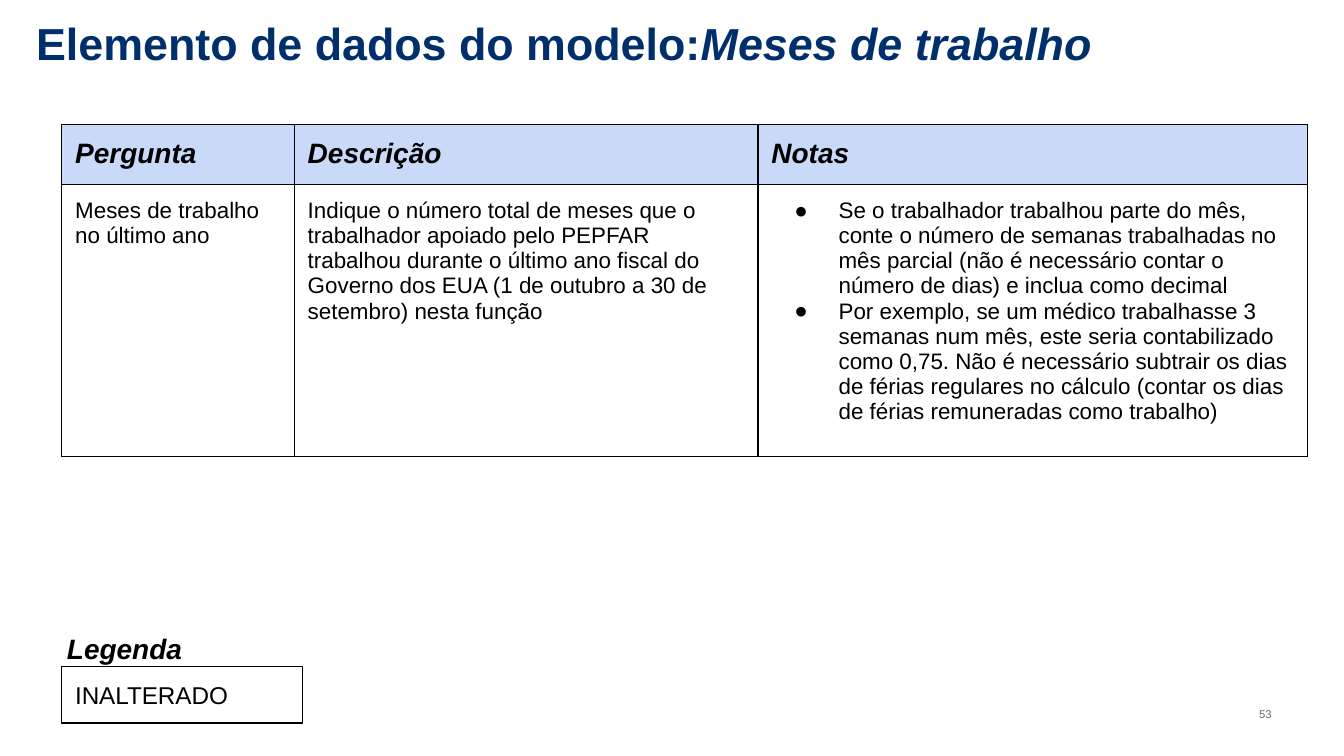
import dataclasses
import typing

import lxml.etree
import pptx
import pptx.dml.color
import pptx.enum.shapes
import pptx.enum.text
import pptx.oxml
import pptx.oxml.ns
import pptx.util

RGBColor = pptx.dml.color.RGBColor
Anchor = pptx.enum.text.MSO_ANCHOR

NAVY = RGBColor(0x00, 0x2F, 0x6C)
GREY = RGBColor(0x6C, 0x64, 0x63)
BLACK = RGBColor(0x00, 0x00, 0x00)
PALE_BLUE = RGBColor(0xC9, 0xDA, 0xF8)

FONT = "Arial"
UNIT = pptx.util.Inches(0.1)  # one grid column or row
SLIDE_COLUMNS, SLIDE_ROWS = 100, 56.25
BORDER = pptx.util.Pt(0.75)


def grid(count: float) -> int:
    """Length of a number of grid columns or rows."""
    return round(count * UNIT)


@dataclasses.dataclass(frozen=True)
class Area:
    column: float
    row: float
    columns: float
    rows: float

    def lengths(self) -> tuple[int, int, int, int]:
        return grid(self.column), grid(self.row), grid(self.columns), grid(self.rows)


@dataclasses.dataclass(frozen=True)
class Style:
    size: float
    color: RGBColor = BLACK
    bold: bool = False
    italic: bool = False


@dataclasses.dataclass(frozen=True)
class Label:
    area: Area
    runs: tuple[tuple[str, Style], ...]
    anchor: Anchor = Anchor.TOP
    inset_rows: float = 1
    outlined: bool = False


@dataclasses.dataclass(frozen=True)
class Column:
    width: float
    heading: str
    entries: tuple[str, ...]
    bulleted: bool = False


TITLE = Style(24, NAVY, bold=True)
TITLE_ITALIC = dataclasses.replace(TITLE, italic=True)
HEADING = Style(15, bold=True, italic=True)
BODY = Style(12)

LABELS = (
    Label(Area(1.7, -0.15, 93.2, 6.3),
          (("Elemento de dados do modelo:", TITLE), ("Meses de trabalho", TITLE_ITALIC)),
          Anchor.BOTTOM),
    Label(Area(92.7, 51, 6, 4.3), (("53", Style(6, GREY)),), Anchor.MIDDLE, 0.5),
    Label(Area(4.6, 49.6, 17.9, 4.2), (("INALTERADO", Style(13)),), outlined=True),
    Label(Area(4, 46, 11.6, 4.5), (("Legenda", HEADING),)),
)

TABLE_LEFT, TABLE_TOP = 4.6, 9.25
TABLE_ROWS = (4, 20.2)
COLUMNS = (
    Column(17.3, "Pergunta", ("Meses de trabalho no último ano",)),
    Column(34.5, "Descrição", (
        "Indique o número total de meses que o trabalhador apoiado pelo PEPFAR "
        "trabalhou durante o último ano fiscal do Governo dos EUA "
        "(1 de outubro a 30 de setembro) nesta função",)),
    Column(40.9, "Notas", (
        "Se o trabalhador trabalhou parte do mês, conte o número de semanas "
        "trabalhadas no mês parcial (não é necessário contar o número de dias) "
        "e inclua como decimal",
        "Por exemplo, se um médico trabalhasse 3 semanas num mês, este seria "
        "contabilizado como 0,75. Não é necessário subtrair os dias de férias "
        "regulares no cálculo (contar os dias de férias remuneradas como trabalho)"),
        bulleted=True),
)


def add_element(parent: typing.Any, tag: str, **attributes: str) -> typing.Any:
    element = lxml.etree.SubElement(parent, pptx.oxml.ns.qn(tag))
    for name, value in attributes.items():
        element.set(name, value)
    return element


def style_font(font: typing.Any, style: Style) -> None:
    font.name = FONT
    font.size = pptx.util.Pt(style.size)
    font.bold = style.bold
    font.italic = style.italic
    font.color.rgb = style.color


def set_insets(target: typing.Any, rows: float = 1) -> None:
    target.margin_left = target.margin_right = grid(1)
    target.margin_top = target.margin_bottom = grid(rows)


def add_label(page: typing.Any, label: Label) -> None:
    if label.outlined:
        box = page.shapes.add_shape(
            pptx.enum.shapes.MSO_SHAPE.RECTANGLE, *label.area.lengths())
        box.shadow.inherit = False
        box.fill.background()
        box.line.color.rgb = BLACK
        box.line.width = BORDER
    else:
        box = page.shapes.add_textbox(*label.area.lengths())
    frame = box.text_frame
    frame.word_wrap = True
    frame.vertical_anchor = label.anchor
    set_insets(frame, label.inset_rows)
    para = frame.paragraphs[0]
    para.alignment = pptx.enum.text.PP_ALIGN.LEFT
    for text, style in label.runs:
        span = para.add_run()
        span.text = text
        style_font(span.font, style)


def add_bullet(para: typing.Any) -> None:
    properties = para._p.get_or_add_pPr()
    properties.set("marL", str(grid(5)))
    properties.set("indent", str(grid(-3.3)))
    color = add_element(properties, "a:buClr")
    add_element(color, "a:srgbClr", val=str(BLACK))
    add_element(properties, "a:buFont", typeface=FONT)
    add_element(properties, "a:buChar", char="●")


def add_borders(cell: typing.Any) -> None:
    properties = cell._tc.get_or_add_tcPr()
    for position, side in enumerate(("a:lnL", "a:lnR", "a:lnT", "a:lnB")):
        line = add_element(properties, side, w=str(BORDER))
        fill = add_element(line, "a:solidFill")
        add_element(fill, "a:srgbClr", val=str(BLACK))
        properties.insert(position, line)  # borders come before the fill


def fill_cell(cell: typing.Any, entries: tuple[str, ...], style: Style,
              bulleted: bool = False) -> None:
    set_insets(cell)
    cell.vertical_anchor = Anchor.TOP
    cell.text_frame.text = "\n".join(entries)
    for para in cell.text_frame.paragraphs:
        if bulleted:
            add_bullet(para)
        for span in para.runs:
            style_font(span.font, style)
    if style is HEADING:
        cell.fill.solid()
        cell.fill.fore_color.rgb = PALE_BLUE
    else:
        cell.fill.background()
    add_borders(cell)


def add_question_table(page: typing.Any) -> None:
    area = Area(TABLE_LEFT, TABLE_TOP,
                sum(column.width for column in COLUMNS), sum(TABLE_ROWS))
    table = page.shapes.add_table(
        len(TABLE_ROWS), len(COLUMNS), *area.lengths()).table
    table.horz_banding = False
    for row, height in zip(table.rows, TABLE_ROWS):
        row.height = grid(height)
    for index, column in enumerate(COLUMNS):
        table.columns[index].width = grid(column.width)
        fill_cell(table.cell(0, index), (column.heading,), HEADING)
        fill_cell(table.cell(1, index), column.entries, BODY, column.bulleted)


def main() -> None:
    deck = pptx.Presentation()
    deck.slide_width, deck.slide_height = grid(SLIDE_COLUMNS), grid(SLIDE_ROWS)
    page = deck.slides.add_slide(deck.slide_layouts[6])
    # Title, page number and legend
    for label in LABELS:
        add_label(page, label)
    # Question, description and notes
    add_question_table(page)
    deck.save("out.pptx")


if __name__ == "__main__":
    main()
